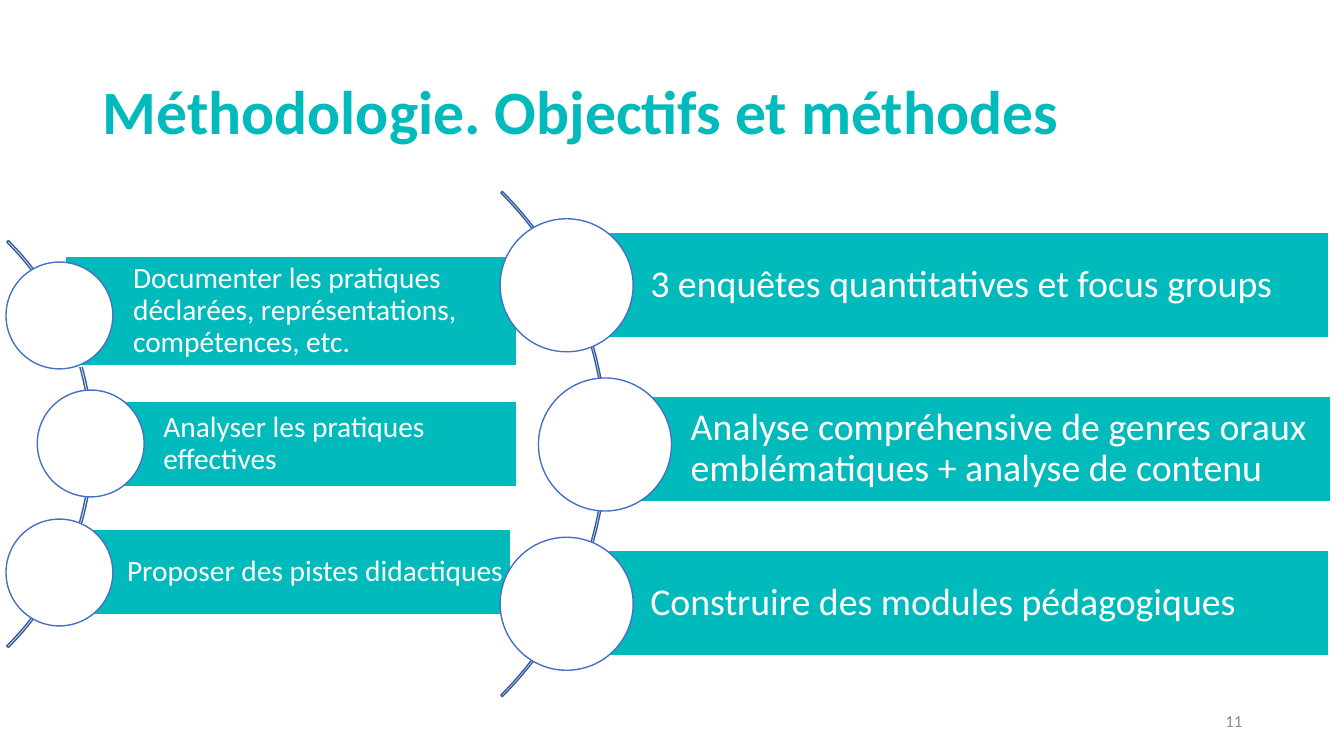
"""Build the slide on research objectives and their methods."""
import pptx
import pptx.dml.color
import pptx.enum.shapes
import pptx.enum.text
import pptx.util

Inches = pptx.util.Inches
Pt = pptx.util.Pt
SHAPES = pptx.enum.shapes.MSO_SHAPE
ALIGN = pptx.enum.text.PP_ALIGN
COLOURS = {"teal": "00BABC", "white": "FFFFFF", "arc": "365B9D",
           "ring": "4472C4", "grey": "8C8C8C"}

OBJECTIVES = {
    "arc": (-4.79, 1.55, 5.71, 5.71), "thickness": 0.004,
    "diameter": 1.06, "inset": 0.67, "margin": 0.06, "size": 21,
    "steps": [
        ("Documenter les pratiques déclarées, représentations, compétences, etc.",
         (0.65, 2.54, 4.48, 1.09), (0.06, 2.6)),
        ("Analyser les pratiques effectives",
         (0.95, 3.98, 4.18, 0.85), (0.37, 3.87)),
        ("Proposer des pistes didactiques",
         (0.59, 5.25, 4.48, 0.85), (0.06, 5.15)),
    ],
}
METHODS = {
    "arc": (-1.07, 0.86, 7.09, 7.09), "thickness": 0.003,
    "diameter": 1.32, "inset": 0.84, "margin": 0.07, "size": 27,
    "steps": [
        ("3 enquêtes quantitatives et focus groups",
         (5.61, 2.3, 7.57, 1.05), (4.96, 2.17)),
        ("Analyse compréhensive de genres oraux emblématiques + analyse de contenu",
         (6.01, 3.93, 7.19, 1.05), (5.34, 3.75)),
        ("Construire des modules pédagogiques",
         (5.61, 5.46, 7.57, 1.05), (4.96, 5.33)),
    ],
}


def colour(name):
    """Return the named colour."""
    return pptx.dml.color.RGBColor.from_string(COLOURS[name])


def write(shape, text, size, colour_name, align=ALIGN.LEFT, bold=False,
          spacing=0.9, margins=(0.1, 0.05, 0.1, 0.05)):
    """Put one formatted, vertically centred paragraph in a shape."""
    frame = shape.text_frame
    frame.text = text
    frame.word_wrap = True
    frame.auto_size = pptx.enum.text.MSO_AUTO_SIZE.NONE
    frame.vertical_anchor = pptx.enum.text.MSO_ANCHOR.MIDDLE
    for side, margin in zip(("left", "top", "right", "bottom"), margins):
        setattr(frame, f"margin_{side}", Inches(margin))
    paragraph = frame.paragraphs[0]
    paragraph.alignment = align
    paragraph.line_spacing = spacing
    font = paragraph.runs[0].font
    for name, value in {"name": "Calibri", "size": Pt(size), "bold": bold}.items():
        setattr(font, name, value)
    font.color.rgb = colour(colour_name)


def add_outlined(slide, kind, box, line, fill=None):
    """Add a preset shape with a thin line and an optional fill."""
    shape = slide.shapes.add_shape(kind, *map(Inches, box))
    shape.shadow.inherit = False
    shape.line.color.rgb = colour(line)
    shape.line.width = Pt(1)
    if fill:
        shape.fill.solid()
        shape.fill.fore_color.rgb = colour(fill)
    else:
        shape.fill.background()
    return shape


def add_curved_list(slide, column):
    """Add an arc with labelled bars and circles along it."""
    arc = add_outlined(slide, SHAPES.BLOCK_ARC, column["arc"], "arc")
    for index, value in enumerate((189, 27, column["thickness"])):
        arc.adjustments[index] = value
    margin, diameter = column["margin"], column["diameter"]
    for text, bar_box, circle_corner in column["steps"]:
        bar = add_outlined(slide, SHAPES.RECTANGLE, bar_box, "white", "teal")
        write(bar, text, column["size"], "white",
              margins=(column["inset"], margin, margin, margin))
        add_outlined(slide, SHAPES.OVAL, (*circle_corner, diameter, diameter),
                     "ring", "white")


def add_title(slide, text):
    """Place and format the title."""
    title = slide.shapes.title
    box = {"left": 0.92, "top": 0.41, "width": 11.5, "height": 1.45}
    for name, value in box.items():
        setattr(title, name, Inches(value))
    write(title, text, 44, "teal", bold=True)


def add_page_number(slide, text):
    """Add the page number at the lower right."""
    box = slide.shapes.add_textbox(*map(Inches, (9.42, 6.95, 3, 0.4)))
    write(box, text, 12, "grey", align=ALIGN.RIGHT, spacing=1.0)


def main():
    """Build and save the presentation."""
    presentation = pptx.Presentation()
    presentation.slide_width = Inches(13.33)
    presentation.slide_height = Inches(7.5)
    slide = presentation.slides.add_slide(presentation.slide_layouts[5])
    add_page_number(slide, "11")
    add_title(slide, "Méthodologie. Objectifs et méthodes")
    for column in (OBJECTIVES, METHODS):
        add_curved_list(slide, column)
    presentation.save("out.pptx")


if __name__ == "__main__":
    main()
